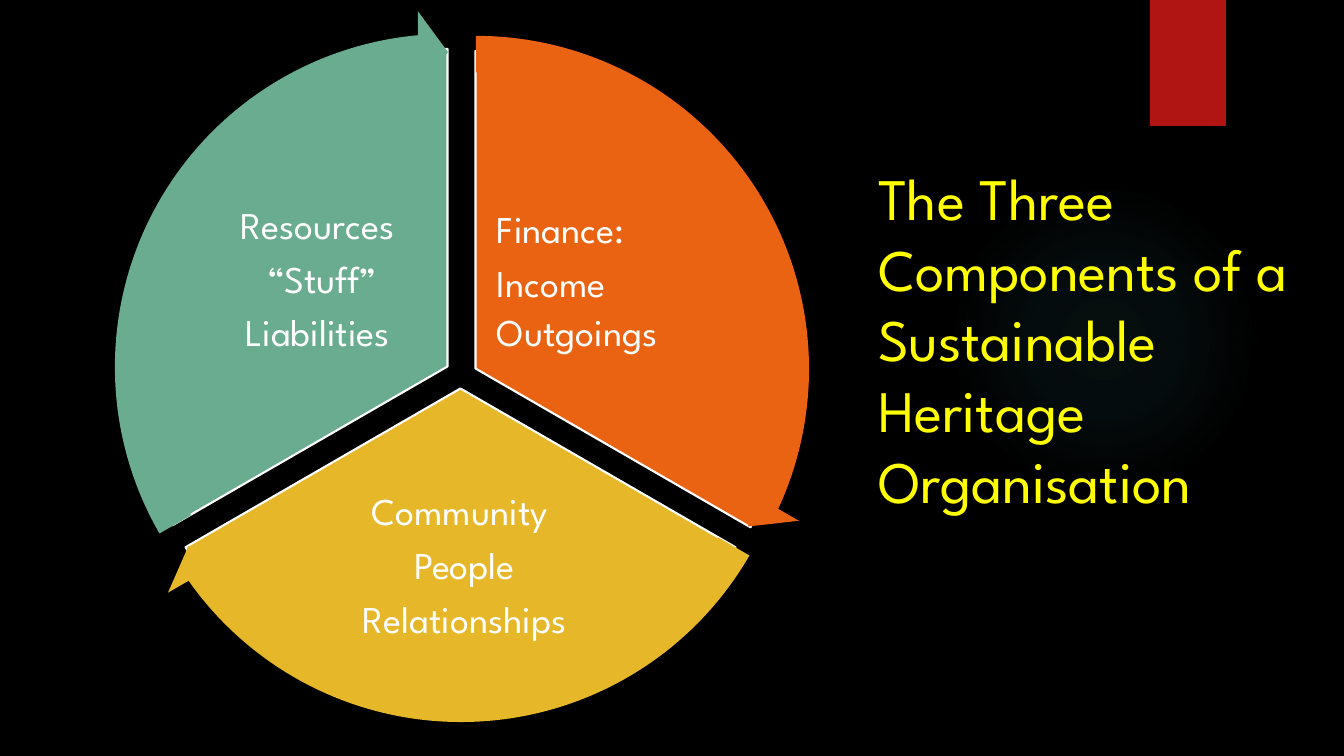
from dataclasses import dataclass

from lxml import etree
from pptx import Presentation
from pptx.dml.color import RGBColor
from pptx.enum.shapes import MSO_SHAPE
from pptx.enum.text import MSO_ANCHOR, MSO_AUTO_SIZE, PP_ALIGN
from pptx.oxml.ns import qn
from pptx.shapes.autoshape import Shape
from pptx.shapes.group import GroupShape
from pptx.slide import Slide
from pptx.util import Emu, Pt

PIE, ARROW = MSO_SHAPE.PIE, MSO_SHAPE.CIRCULAR_ARROW
OVAL, RECT = MSO_SHAPE.OVAL, MSO_SHAPE.RECTANGLE
LEFT, CENTER = PP_ALIGN.LEFT, PP_ALIGN.CENTER
TOP, MIDDLE = MSO_ANCHOR.TOP, MSO_ANCHOR.MIDDLE
NO_FIT = MSO_AUTO_SIZE.NONE

PIE_SIZE = 635
ARROW_SIZE = 714
ARROW_MARGIN = 39
HEAD_ANGLE = 3.275
ARROW_THICKNESS = 0.051
HEAD_WIDTH = 0.059


@dataclass(frozen=True)
class Theme:
    font: str = "League Spartan"
    background: str = "000000"
    title: str = "FFFF00"
    text: str = "FFFFFF"
    ribbon: str = "B01513"
    glow: str = "50B9C1"
    finance: str = "EA6312"
    community: str = "E6B729"
    resources: str = "6AAC90"
    title_size: int = 42
    label_size: int = 27
    outline: float = 1.5


@dataclass(frozen=True)
class Box:
    x: int
    y: int
    w: int
    h: int

    def emu(self) -> tuple[Emu, Emu, Emu, Emu]:
        return px(self.x), px(self.y), px(self.w), px(self.h)


@dataclass(frozen=True)
class Line:
    text: str
    after: float = 6
    spacing: float = 1.0


@dataclass(frozen=True)
class Sector:
    x: int
    y: int
    start: int
    end: int
    color: str
    label: Box
    align: PP_ALIGN
    lines: tuple[Line, ...]


THEME = Theme()
SECTORS = (
    Sector(158, 51, 162, 18, THEME.finance, Box(493, 185, 227, 190), LEFT,
           (Line("Finance:"), Line("Income"), Line("Outgoings", spacing=0.9))),
    Sector(143, 71, 18, 90, THEME.community, Box(294, 484, 341, 166), CENTER,
           tuple(Line(t, 9.45, 0.9) for t in ("Community ", "People", "Relationships"))),
    Sector(130, 49, 90, 162, THEME.resources, Box(204, 183, 227, 190), CENTER,
           (Line("Resources"), Line(" “Stuff”"), Line("Liabilities", 12))),
)


def px(n: int) -> Emu:
    return Emu(round(n * 914400 / 100.8))


def rgb(color: str) -> RGBColor:
    return RGBColor.from_string(color)


def add_shape(parent: Slide | GroupShape, kind: MSO_SHAPE, box: Box, color: str,
              adjustments: tuple[float, ...] = ()) -> Shape:
    sp = parent.shapes.add_shape(kind, *box.emu())
    sp.shadow.inherit = False
    sp.fill.solid()
    sp.fill.fore_color.rgb = rgb(color)
    sp.line.fill.background()
    for i, value in enumerate(adjustments):
        sp.adjustments[i] = value
    return sp


def add_glow(slide: Slide) -> None:
    sp = add_shape(slide, OVAL, Box(949, 184, 310, 310), THEME.glow)
    grad = etree.Element(qn("a:gradFill"), rotWithShape="1")
    stops = etree.SubElement(grad, qn("a:gsLst"))
    for position, alpha in ((0, 7), (36, 6), (69, 0)):
        stop = etree.SubElement(stops, qn("a:gs"), pos=str(position * 1000))
        color = etree.SubElement(stop, qn("a:srgbClr"), val=THEME.glow)
        etree.SubElement(color, qn("a:alpha"), val=str(alpha * 1000))
    circle = etree.SubElement(grad, qn("a:path"), path="circle")
    etree.SubElement(circle, qn("a:fillToRect"),
                     {side: "50000" for side in "ltrb"})
    spPr = sp.element.spPr
    spPr.replace(spPr.find(qn("a:solidFill")), grad)


def add_pie(group: GroupShape, sector: Sector) -> None:
    sp = add_shape(group, PIE, Box(sector.x, sector.y, PIE_SIZE, PIE_SIZE),
                   sector.color, (sector.start, sector.end))
    sp.line.color.rgb = rgb(THEME.text)
    sp.line.width = Pt(THEME.outline)


def add_label(group: GroupShape, sector: Sector) -> None:
    tf = group.shapes.add_textbox(*sector.label.emu()).text_frame
    tf.word_wrap = True
    tf.vertical_anchor = MIDDLE
    tf.margin_left = tf.margin_right = tf.margin_top = tf.margin_bottom = px(4)
    tf.text = "\n".join(line.text for line in sector.lines)
    for p, line in zip(tf.paragraphs, sector.lines):
        p.alignment = sector.align
        p.line_spacing = line.spacing
        p.space_after = Pt(line.after)
        for r in p.runs:
            r.font.name = THEME.font
            r.font.size = Pt(THEME.label_size)
            r.font.color.rgb = rgb(THEME.text)


def add_arrow(group: GroupShape, sector: Sector) -> None:
    box = Box(sector.x - ARROW_MARGIN, sector.y - ARROW_MARGIN, ARROW_SIZE, ARROW_SIZE)
    add_shape(group, ARROW, box, sector.color,
              (ARROW_THICKNESS, HEAD_ANGLE, sector.end - HEAD_ANGLE, sector.start, HEAD_WIDTH))


def format_title(slide: Slide) -> None:
    title = slide.shapes.title
    title.left, title.top, title.width, title.height = Box(868, 157, 457, 154).emu()
    tf = title.text_frame
    tf.text = "The Three Components of a Sustainable\vHeritage \vOrganisation"
    tf.word_wrap = True
    tf.auto_size = NO_FIT
    tf.vertical_anchor = TOP
    p = tf.paragraphs[0]
    p.alignment = LEFT
    p.line_spacing = 1.0
    for r in p.runs:
        r.font.name = THEME.font
        r.font.size = Pt(THEME.title_size)
        r.font.color.rgb = rgb(THEME.title)
    slide.shapes.element.append(title.element)


def main() -> None:
    prs = Presentation()
    prs.slide_width, prs.slide_height = px(1344), px(756)
    slide = prs.slides.add_slide(prs.slide_layouts.get_by_name("Title Only"))
    slide.background.fill.solid()
    slide.background.fill.fore_color.rgb = rgb(THEME.background)
    add_glow(slide)
    add_shape(slide, RECT, Box(1150, 0, 76, 126), THEME.ribbon)
    format_title(slide)
    wheel = slide.shapes.add_group_shape()
    for sector in SECTORS:
        add_pie(wheel, sector)
        add_label(wheel, sector)
    for sector in SECTORS:
        add_arrow(wheel, sector)
    prs.save("out.pptx")


if __name__ == "__main__":
    main()
